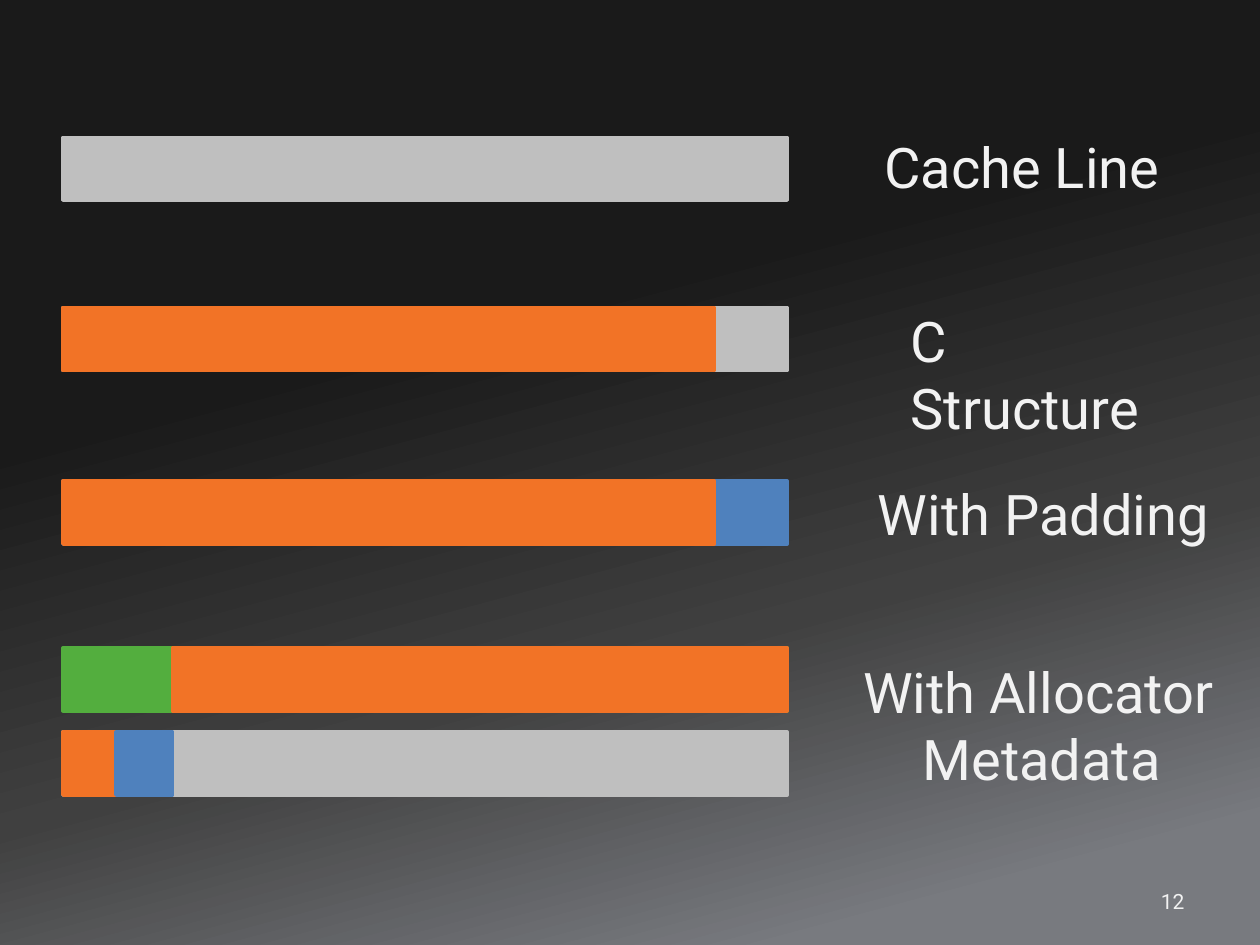
from copy import deepcopy

from pptx import Presentation
from pptx.dml.color import RGBColor
from pptx.enum.shapes import MSO_SHAPE
from pptx.enum.text import MSO_ANCHOR, MSO_AUTO_SIZE, PP_ALIGN
from pptx.util import Cm, Pt

THEME = {
    "grey": "BFBFBF", "orange": "F27326", "blue": "4F81BD", "green": "53AE3E",
    "text": "F2F2F2", "font": "Roboto", "label": 32, "small": 12, "line": 2,
    "back": [(0.35, "1A1A1A"), (0.65, "404040"), (0.9, "787A7F")], "angle": 285,
}
LEFT, FULL, HIGH = 1.27, 14.6, 1.27
BODY, HEAD = 13.13, 2.21

# fmt: off
ROWS = [
    {"bars": [(2.77, [("grey", 0, FULL)])],
     "label": ["Cache Line"], "box": (17.58, 2.54, 6.15, 1.63)},
    {"bars": [(6.2, [("grey", 0, FULL), ("orange", 0, BODY)])],
     "label": ["C Structure"], "box": (18.11, 6.05, 6.07, 1.63)},
    {"bars": [(9.7, [("blue", 0, FULL), ("orange", 0, BODY)])],
     "label": ["With Padding"], "box": (17.45, 9.55, 7.32, 1.63)},
    {"bars": [(13.06, [("green", 0, FULL), ("orange", HEAD, FULL - HEAD)]),
              (14.76, [("grey", 0, FULL), ("orange", 0, 1.47), ("blue", 1.07, 1.14)])],
     "label": ["With Allocator", "Metadata"], "box": (17.15, 13.13, 7.7, 3.0)},
]
# fmt: on
PAGE = {"label": ["12"], "box": (18.21, 17.65, 5.92, 1.02)}
GROW = {"word_wrap": True, "auto_size": MSO_AUTO_SIZE.SHAPE_TO_FIT_TEXT}
FIXED = {"word_wrap": True, "vertical_anchor": MSO_ANCHOR.MIDDLE}


def apply(item, style):
    """Set each attribute named in a style."""
    for key, value in style.items():
        setattr(item, key, value)


def tint(name):
    """Return a theme colour."""
    return RGBColor.from_string(THEME[name])


def paint(slide):
    """Fill the background with the theme gradient."""
    fill = slide.background.fill
    fill.gradient()
    fill.gradient_angle = THEME["angle"]
    stops = slide.element.xpath(".//a:gsLst")[0]
    stops.append(deepcopy(stops[0]))
    for stop, (place, code) in zip(fill.gradient_stops, THEME["back"]):
        stop.position = place
        stop.color.rgb = RGBColor.from_string(code)


def bar(shapes, top, part):
    """Draw one coloured part of a memory bar."""
    name, start, width = part
    size = map(Cm, (LEFT + start, top, width, HIGH))
    rect = shapes.add_shape(MSO_SHAPE.RECTANGLE, *size)
    rect.shadow.inherit = False
    for fill in (rect.fill, rect.line.fill):
        fill.solid()
        fill.fore_color.rgb = tint(name)
    rect.line.width = Pt(THEME["line"])


def write(shapes, entry, size, frame, aligns):
    """Write a text box with one alignment per paragraph."""
    text = shapes.add_textbox(*map(Cm, entry["box"])).text_frame
    text.text = "\n".join(entry["label"])
    apply(text, frame)
    font = {"name": THEME["font"], "size": Pt(THEME[size])}
    for para, align in zip(text.paragraphs, aligns):
        para.alignment = align
        for run in para.runs:
            apply(run.font, font)
            run.font.color.rgb = tint("text")


def main():
    """Build the cache line slide."""
    deck = Presentation()
    apply(deck, {"slide_width": Cm(25.4), "slide_height": Cm(19.05)})
    slide = deck.slides.add_slide(deck.slide_layouts[6])
    paint(slide)
    for row in ROWS:
        group = slide.shapes.add_group_shape().shapes
        for top, parts in row["bars"]:
            for part in parts:
                bar(group, top, part)
        write(group, row, "label", GROW, [PP_ALIGN.LEFT, PP_ALIGN.CENTER])
    write(slide.shapes, PAGE, "small", FIXED, [PP_ALIGN.RIGHT])
    deck.save("out.pptx")


if __name__ == "__main__":
    main()
